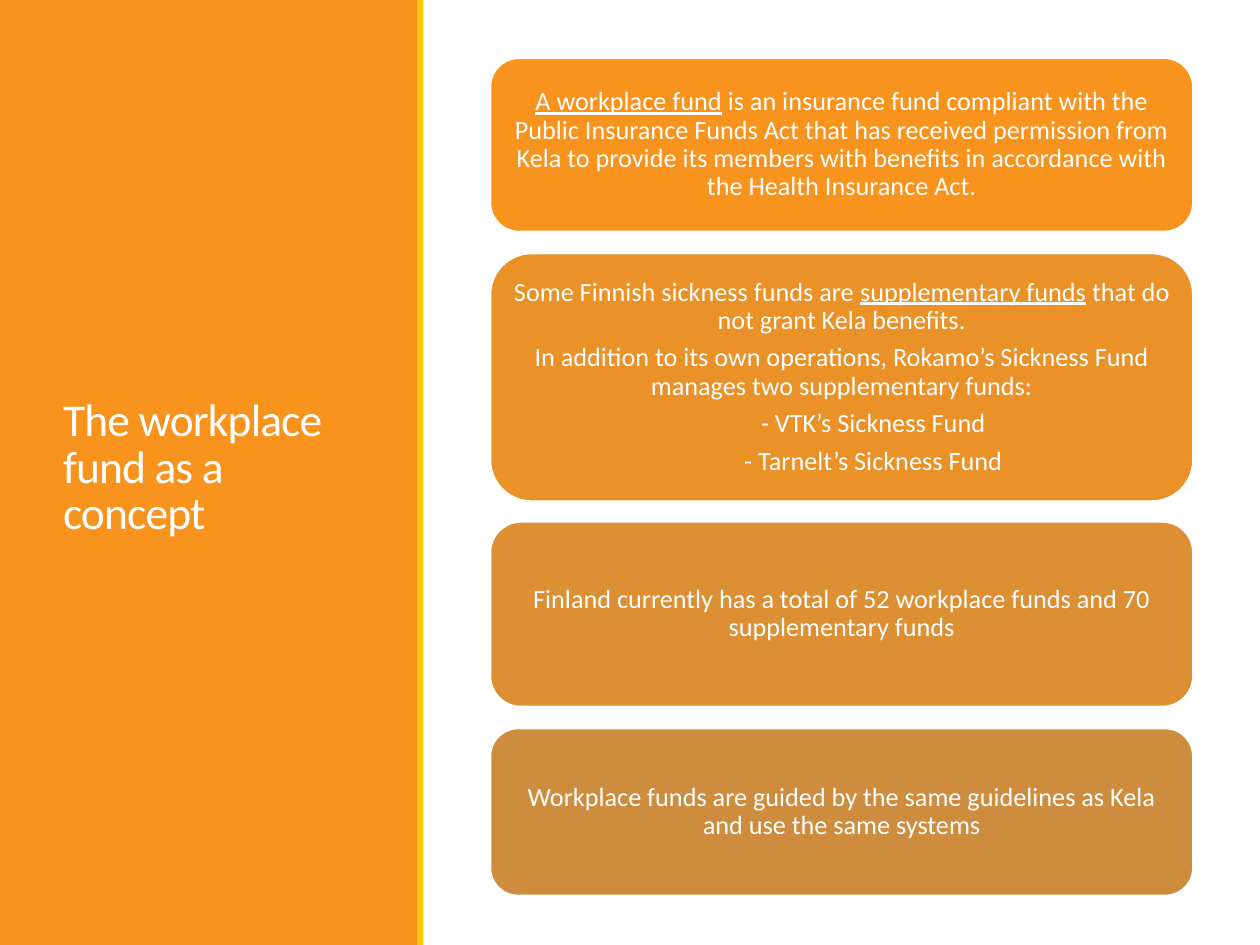
from pptx import Presentation
from pptx.dml.color import RGBColor
from pptx.enum.shapes import MSO_SHAPE
from pptx.enum.text import MSO_ANCHOR, MSO_AUTO_SIZE, PP_ALIGN
from pptx.util import Inches, Pt

RECT = MSO_SHAPE.RECTANGLE
ROUND = MSO_SHAPE.ROUNDED_RECTANGLE
MIDDLE = MSO_ANCHOR.MIDDLE
NO_FIT = MSO_AUTO_SIZE.NONE
LEFT = PP_ALIGN.LEFT
CENTER = PP_ALIGN.CENTER

FONT = "Calibri"
COLORS = {"white": "FFFFFF", "orange": "F8931D", "yellow": "FFCA08"}

CARD_LEFT, CARD_WIDTH = 3.89, 5.58

# Top, height, fill and paragraphs of each card; "_" sets off underlined words
CARDS = [
    (0.46, 1.38, "F8931D", [
        "_A workplace fund_ is an insurance fund compliant with the Public "
        "Insurance Funds Act that has received permission from Kela to provide "
        "its members with benefits in accordance with the Health Insurance Act."]),
    (2.01, 1.97, "EA9128", [
        "Some Finnish sickness funds are _supplementary funds_ that do not "
        "grant Kela benefits.",
        "In addition to its own operations, Rokamo’s Sickness Fund manages two "
        "supplementary funds:",
        "\t- VTK’s Sickness Fund",
        "\t- Tarnelt’s Sickness Fund"]),
    (4.14, 1.47, "DC8F33", [
        "Finland currently has a total of 52 workplace funds and 70 "
        "supplementary funds"]),
    (5.78, 1.33, "CE8D3E", [
        "Workplace funds are guided by the same guidelines as Kela and use the "
        "same systems"]),
]


def style_font(font, size):
    font.name = FONT
    font.size = Pt(size)
    font.color.rgb = RGBColor.from_string(COLORS["white"])


def add_box(slide, kind, left, top, width, height, fill):
    box = slide.shapes.add_shape(
        kind, Inches(left), Inches(top), Inches(width), Inches(height))
    box.shadow.inherit = False
    box.fill.solid()
    box.fill.fore_color.rgb = RGBColor.from_string(fill)
    box.line.fill.background()
    return box


def set_title(slide, text):
    title = slide.shapes.title
    title.left, title.top = Inches(0.4), Inches(0.57)
    title.width, title.height = Inches(2.53), Inches(6.31)
    frame = title.text_frame
    frame.text = text
    frame.word_wrap = True
    frame.auto_size = NO_FIT
    frame.vertical_anchor = MIDDLE
    para = frame.paragraphs[0]
    para.alignment = LEFT
    para.line_spacing = 0.85
    run = para.runs[0]
    style_font(run.font, 26)
    run.font._element.set("spc", "-50")  # tighter letters, in 1/100 pt


def fill_para(para, text):
    para.alignment = CENTER
    para.line_spacing = 0.9
    para.space_after = Pt(5.25)
    for i, part in enumerate(text.split("_")):
        if part:
            run = para.add_run()
            run.text = part
            style_font(run.font, 15)
            run.font.underline = i % 2 == 1


def add_card(slide, top, height, fill, texts):
    card = add_box(slide, ROUND, CARD_LEFT, top, CARD_WIDTH, height, fill)
    card.line.color.rgb = RGBColor.from_string(COLORS["white"])
    card.line.width = Pt(1.25)
    frame = card.text_frame
    frame.word_wrap = True
    frame.vertical_anchor = MIDDLE
    frame.margin_left = frame.margin_right = Inches(0.06)
    frame.margin_top = frame.margin_bottom = Inches(0.06)
    for i, text in enumerate(texts):
        para = frame.add_paragraph() if i else frame.paragraphs[0]
        fill_para(para, text)


def main():
    deck = Presentation()
    deck.slide_width, deck.slide_height = Inches(10), Inches(7.5)
    slide = deck.slides.add_slide(deck.slide_layouts[5])

    # Side panel, moved behind the title
    panel = add_box(slide, RECT, 0, 0, 3.32, 7.5, COLORS["orange"])
    slide.shapes.title._element.addprevious(panel._element)
    set_title(slide, "The workplace fund as a concept")
    add_box(slide, RECT, 3.31, 0, 0.05, 7.5, COLORS["yellow"])

    # Column of cards
    for card in CARDS:
        add_card(slide, *card)

    deck.save("out.pptx")


if __name__ == "__main__":
    main()
